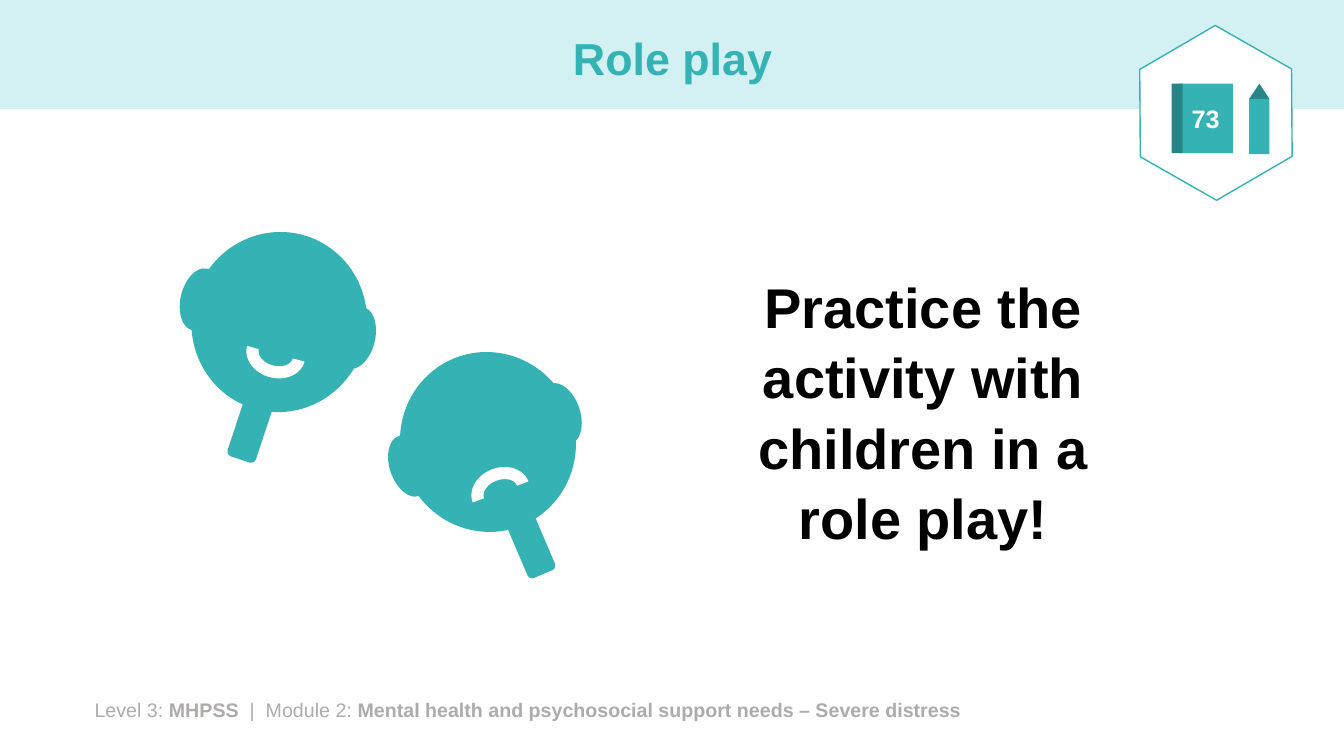
import math
import pptx
import pptx.util
import pptx.dml.color
import pptx.enum.shapes
import pptx.enum.text

SHAPE = pptx.enum.shapes.MSO_SHAPE
ALIGN = pptx.enum.text.PP_ALIGN
ANCHOR = pptx.enum.text.MSO_ANCHOR
WIDTH, HEIGHT = 13.33, 7.5
TEAL, DARK_TEAL, PALE_TEAL = "35B2B4", "278587", "D3F1F2"
WHITE, BLACK, GREY = "FFFFFF", "000000", "AEABAB"


def color(value):
    return pptx.dml.color.RGBColor.from_string(value)


def inches(box):
    return [pptx.util.Inches(length) for length in box]


def within(box, left, top, width, height):
    """Turn shares of a box into a box on the slide."""
    return (box[0] + left * box[2], box[1] + top * box[3],
            width * box[2], height * box[3])


def add_shape(shapes, kind, box, fill, rotation=0, line=None, adjustments=()):
    shape = shapes.add_shape(kind, *inches(box))
    shape.shadow.inherit = False
    shape.rotation = rotation
    shape.fill.solid()
    shape.fill.fore_color.rgb = color(fill)
    if line:
        shape.line.color.rgb = color(line)
        shape.line.width = pptx.util.Pt(1)
    else:
        shape.line.fill.background()
    for index, value in enumerate(adjustments):
        shape.adjustments[index] = value
    return shape


def write(shape, *runs, size, ink, align=ALIGN.LEFT, anchor=ANCHOR.TOP, spacing=None):
    """Fill a shape with one paragraph of (text, bold) runs."""
    frame = shape.text_frame
    frame.word_wrap = True
    frame.vertical_anchor = anchor
    paragraph = frame.paragraphs[0]
    paragraph.alignment = align
    if spacing:
        paragraph.line_spacing = spacing
    for text, bold in runs:
        run = paragraph.add_run()
        run.text = text
        run.font.name = "Arial"
        run.font.size = pptx.util.Pt(size)
        run.font.bold = bold
        run.font.color.rgb = color(ink)


def add_header(slide, box):
    add_shape(slide.shapes, SHAPE.RECTANGLE, box, PALE_TEAL)
    title = slide.shapes.add_textbox(*inches(within(box, 0.069, 0.12, 0.863, 0.88)))
    write(title, ("Role play", True), size=32, ink=TEAL,
          align=ALIGN.CENTER, anchor=ANCHOR.MIDDLE, spacing=0.9)


def add_footer(slide, box):
    footer = slide.shapes.add_textbox(*inches(box))
    write(footer, ("Level 3: ", False), ("MHPSS ", True), (" |  Module 2: ", False),
          ("Mental health and psychosocial support needs – Severe distress", True),
          size=14, ink=GREY)


def add_mask(slide, head, tilt, handle_x, handle_tilt, mouth, mouth_tilt):
    """Draw a face on a stick; parts are centred in shares of the head's width."""
    shapes = slide.shapes.add_group_shape().shapes
    left, top, unit, height = head
    sine, cosine = math.sin(math.radians(tilt)), math.cos(math.radians(tilt))

    def part(kind, x, y, width, height_share, fill, rotation, adjustments=()):
        center_x = left + unit * (0.5 + x * cosine - y * sine)
        center_y = top + height / 2 + unit * (x * sine + y * cosine)
        part_width, part_height = width * unit, height_share * unit
        add_shape(shapes, kind,
                  (center_x - part_width / 2, center_y - part_height / 2,
                   part_width, part_height),
                  fill, rotation, adjustments=adjustments)

    part(SHAPE.ROUNDED_RECTANGLE, handle_x, 0.57, 0.17, 0.49, TEAL, handle_tilt, (0.167,))
    add_shape(shapes, SHAPE.OVAL, head, TEAL, tilt)
    for ear_x in (-0.47, 0.445):
        part(SHAPE.OVAL, ear_x, -0.017, 0.22, 0.362, TEAL, tilt)
    part(SHAPE.BLOCK_ARC, *mouth, 0.34, 0.276, WHITE, mouth_tilt, (108, 0, 0.25))


def add_message(slide, box):
    message = slide.shapes.add_textbox(*inches(box))
    write(message, ("Practice the activity with children in a role play!", True),
          size=40, ink=BLACK, align=ALIGN.CENTER, spacing=1.05)


def add_page_badge(slide, box):
    shapes = slide.shapes.add_group_shape().shapes
    add_shape(shapes, SHAPE.HEXAGON, box, WHITE, 29.7, TEAL, (0.29, 1.155))
    # Book with its page number
    book = add_shape(shapes, SHAPE.RECTANGLE, within(box, 0.287, 0.307, 0.31, 0.46), TEAL)
    write(book, ("73", True), size=18, ink=WHITE, align=ALIGN.CENTER, anchor=ANCHOR.MIDDLE)
    add_shape(shapes, SHAPE.RECTANGLE, within(box, 0.247, 0.307, 0.063, 0.46), DARK_TEAL)
    # Pencil
    add_shape(shapes, SHAPE.ISOSCELES_TRIANGLE, within(box, 0.69, 0.307, 0.115, 0.1), DARK_TEAL)
    add_shape(shapes, SHAPE.RECTANGLE, within(box, 0.69, 0.407, 0.115, 0.367), TEAL)


def main():
    presentation = pptx.Presentation()
    presentation.slide_width, presentation.slide_height = inches((WIDTH, HEIGHT))
    slide = presentation.slides.add_slide(presentation.slide_layouts[6])
    page = (0, 0, WIDTH, HEIGHT)
    add_header(slide, within(page, 0, 0, 1, 0.144))
    add_footer(slide, within(page, 0.063, 0.916, 0.851, 0.045))
    # Happy and sad masks
    add_mask(slide, (1.9, 2.3, 1.74, 1.79), 13.8, -0.01, 18.3, (0.024, 0.18), 195.3)
    add_mask(slide, (3.97, 3.49, 1.74, 1.79), -19, 0.035, -23.1, (-0.025, 0.293), -20.7)
    add_message(slide, (6.94, 2.62, 4.43, 2.79))
    add_page_badge(slide, (11.19, 0.37, 1.74, 1.5))
    presentation.save("out.pptx")


if __name__ == "__main__":
    main()
